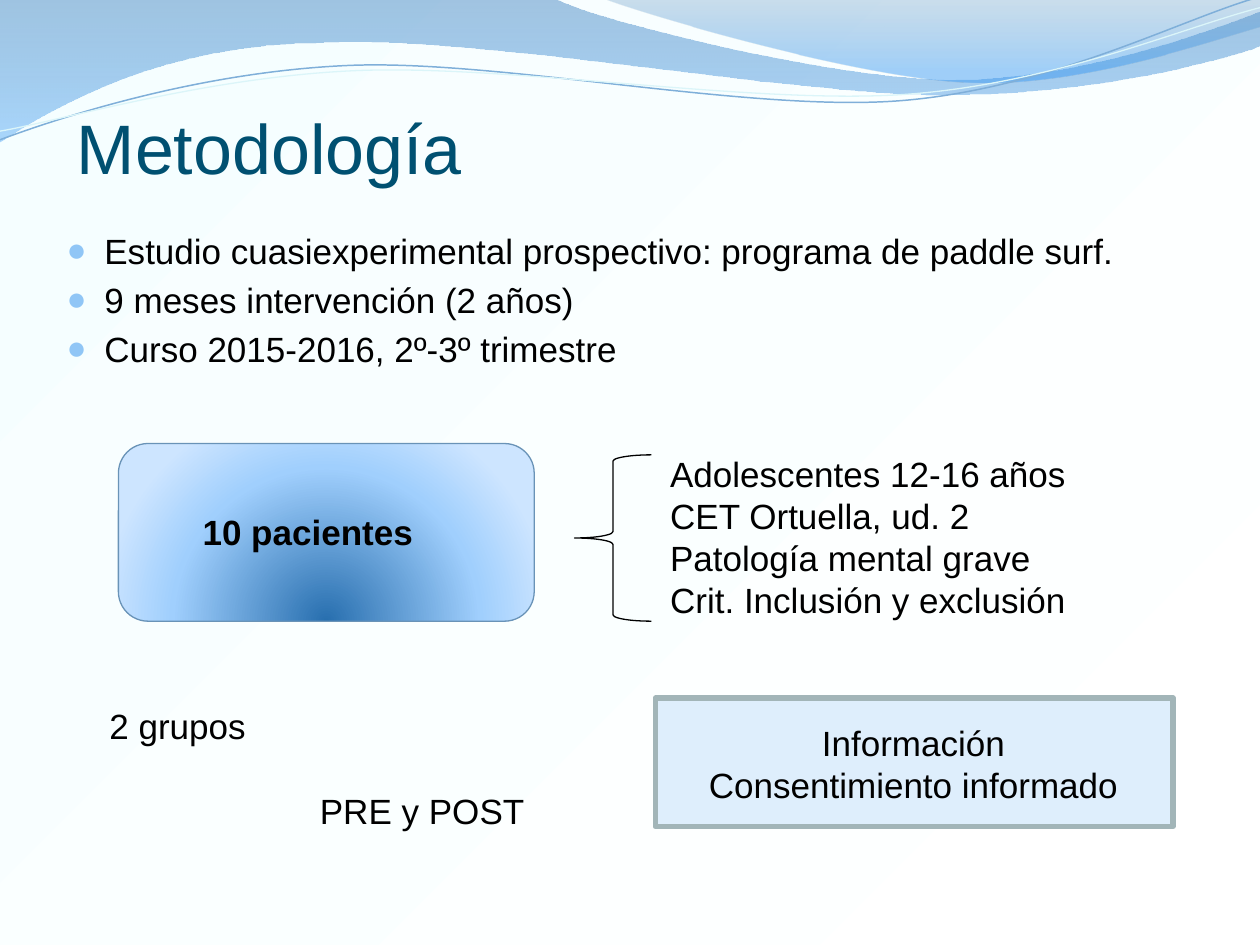
from dataclasses import dataclass

from lxml import etree
from pptx import Presentation
from pptx.dml.color import RGBColor
from pptx.enum.shapes import MSO_SHAPE
from pptx.enum.text import MSO_ANCHOR, MSO_AUTO_SIZE, PP_ALIGN
from pptx.oxml import parse_xml
from pptx.oxml.ns import nsdecls, qn
from pptx.util import Inches, Pt

RECT, ROUNDED, BRACE = MSO_SHAPE.RECTANGLE, MSO_SHAPE.ROUNDED_RECTANGLE, MSO_SHAPE.LEFT_BRACE
LEFT, CENTER = PP_ALIGN.LEFT, PP_ALIGN.CENTER
TOP = MSO_ANCHOR.TOP
GROW = MSO_AUTO_SIZE.SHAPE_TO_FIT_TEXT
COLS, ROWS = 100, 75  # grid of the slide
CELL = Inches(0.1)


@dataclass(frozen=True)
class Theme:
    font: str = "Arial"
    title_size: int = 40
    text_size: int = 20
    title: str = "005071"
    text: str = "000000"
    bullet: str = "90C6F6"
    panel: str = "DEEEFC"
    panel_line: str = "A2B5B8"
    card_line: str = "6993B7"
    wave_dark: str = "7FAFD9"
    wave_light: str = "DBF5F9"
    # gradient stops: position, colour and, where not solid, opacity
    background: tuple = ((0, "FFFFFF"), (100, "F5FEFF"))
    card: tuple = ((0, "286FAF"), (68, "A0CFFD"), (100, "CDE5FF"))
    wave_back: tuple = ((0, "377EBE", 45), (100, "69B5F9", 55))
    wave_front: tuple = ((0, "5F93C1", 30), (80, "3496F1", 45))


def grid(*values):
    return [round(v * CELL) for v in values]


def gradient(parent, stops, angle=None, focus=None):
    """Swap the solid fill of parent for a linear or a circular gradient."""
    fill = parse_xml(f'<a:gradFill {nsdecls("a")} rotWithShape="1"><a:gsLst/></a:gradFill>')
    for pos, colour, *opacity in stops:
        gs = etree.SubElement(fill[0], qn("a:gs"), pos=str(pos * 1000))
        clr = etree.SubElement(gs, qn("a:srgbClr"), val=colour)
        for alpha in opacity:
            etree.SubElement(clr, qn("a:alpha"), val=str(alpha * 1000))
    if focus:
        circle = etree.SubElement(fill, qn("a:path"), path="circle")
        sides = {side: str(v * 1000) for side, v in zip("ltrb", focus)}
        etree.SubElement(circle, qn("a:fillToRect"), **sides)
    else:
        etree.SubElement(fill, qn("a:lin"), ang=str(angle * 60000), scaled="0")
    parent.replace(parent.find(qn("a:solidFill")), fill)


def write(p, text, *, font, size, color, bold=False, align=LEFT):
    p.alignment = align
    r = p.add_run()
    r.text = text
    r.font.name, r.font.size, r.font.bold = font, Pt(size), bold
    r.font.color.rgb = RGBColor.from_string(color)


class SlideBuilder:
    def __init__(self, prs, theme):
        self.theme = theme
        self.s = prs.slides.add_slide(prs.slide_layouts[5])  # title only

    def background(self, stops, angle):
        self.s.background.fill.solid()
        gradient(next(self.s.element.iter(qn("p:bgPr"))), stops, angle)

    def paint(self, sp, fill=None, line=None, width=0.75, angle=90, focus=None):
        """Fill is a colour, a tuple of gradient stops or None."""
        sp.shadow.inherit = False
        if fill is None:
            sp.fill.background()
        else:
            sp.fill.solid()
            if isinstance(fill, str):
                sp.fill.fore_color.rgb = RGBColor.from_string(fill)
            else:
                gradient(sp.element.spPr, fill, angle, focus)
        if line:
            sp.line.color.rgb = RGBColor.from_string(line)
            sp.line.width = Pt(width)
        else:
            sp.line.fill.background()

    def outline(self, start, *steps, closed=True, rotation=0, **style):
        """A step of two numbers is straight, one of six is a cubic curve."""
        points = [grid(*step[i:i + 2]) for step in steps for i in range(0, len(step), 2)]
        fb = self.s.shapes.build_freeform(*grid(*start))
        fb.add_line_segments(points, close=closed)
        sp = fb.convert_to_shape()
        segments = iter(list(sp.element.iter(qn("a:lnTo"))))
        for step in steps:
            first = next(segments)
            if len(step) == 6:  # gather three points into one curve
                first.tag = qn("a:cubicBezTo")
                for _ in range(2):
                    extra = next(segments)
                    first.append(extra[0])
                    extra.getparent().remove(extra)
        sp.rotation = rotation
        self.paint(sp, **style)

    def shape(self, kind, box, **style):
        self.paint(self.s.shapes.add_shape(kind, *grid(*box)), **style)

    def title(self, text, box):
        sp = self.s.shapes.title
        sp.left, sp.top, sp.width, sp.height = grid(*box)
        tf = sp.text_frame
        tf.word_wrap, tf.vertical_anchor, tf.auto_size = False, TOP, GROW
        write(tf.paragraphs[0], text, font=self.theme.font,
              size=self.theme.title_size, color=self.theme.title)

    def text(self, lines, box, bullets=False, **style):
        tf = self.s.shapes.add_textbox(*grid(*box)).text_frame
        tf.word_wrap = True
        if not bullets:
            tf.auto_size = GROW
        for i, line in enumerate(lines):
            p = tf.add_paragraph() if i else tf.paragraphs[0]
            write(p, line, font=self.theme.font, size=self.theme.text_size,
                  color=self.theme.text, **style)
            if bullets:
                self.bullet(p)

    def bullet(self, p):
        pPr = p._p.get_or_add_pPr()
        indent = Inches(0.3)
        pPr.set("marL", str(indent))
        pPr.set("indent", str(-indent))
        before = etree.SubElement(pPr, qn("a:spcBef"))
        etree.SubElement(before, qn("a:spcPct"), val="20000")
        colour = etree.SubElement(pPr, qn("a:buClr"))
        etree.SubElement(colour, qn("a:srgbClr"), val=self.theme.bullet)
        etree.SubElement(pPr, qn("a:buSzPct"), val="95000")
        etree.SubElement(pPr, qn("a:buFont"), typeface=self.theme.font)
        etree.SubElement(pPr, qn("a:buChar"), char="●")


def main():
    prs = Presentation()
    prs.slide_width, prs.slide_height = grid(COLS, ROWS)
    theme = Theme()
    b = SlideBuilder(prs, theme)

    # Background and waves
    b.background(theme.background, angle=225)
    b.outline((0, -0.1), (44, -0.1), (47.6, 1.7, 66.4, 6.3, 75.8, 6.3),
              (85.3, 6.3, 95.8, 2.6, 100, 0.9), (100.1, 3.6),
              (98.3, 4.4, 87, 7.6, 74.6, 7.5), (62.2, 7.5, 38.2, 2.8, 25.7, 3.4),
              (12.9, 3.5, 4.6, 8.3, -0.1, 11.3), fill=theme.wave_back)
    b.outline((47.9, -0.1), (50.9, 1.1, 68.2, 6.2, 76.9, 6.5),
              (85.6, 6.9, 96.1, 3.2, 100, 2.1), (100, 0), fill=theme.wave_front)
    thin = {"closed": False, "rotation": 357.3}
    b.outline((-0.2, 8.74), (4.68, 7.18, 15.84, 4.09, 27.75, 4.15),
              (39.56, 4.21, 59.14, 9.34, 71.17, 9.01),
              (83.2, 8.67, 93.95, 3.57, 100.03, 2.16),
              line=theme.wave_dark, width=0.85, **thin)
    b.outline((-0.16, 8.05), (4.58, 7.47, 16.43, 4.52, 28.33, 4.58),
              (40.35, 4.65, 59.58, 8.76, 71.6, 8.52),
              (83.52, 8.28, 94.23, 4.18, 100.2, 2.97),
              line=theme.wave_light, **thin)

    # Title and study design
    b.title("Metodología", (5.1, 7.8, 32.9, 7.7))
    b.text(["Estudio cuasiexperimental prospectivo: programa de paddle surf.",
            "9 meses intervención (2 años)",
            "Curso 2015-2016, 2º-3º trimestre"], (4.3, 17.7, 97.5, 41.3), bullets=True)

    # Patients and their criteria
    b.shape(ROUNDED, (9.4, 35.2, 33, 14.1), fill=theme.card,
            line=theme.card_line, focus=(50, 130, 50, -30))
    b.text(["10 pacientes"], (15.1, 40, 23, 4.4), bold=True)
    b.shape(BRACE, (45.6, 36.1, 6.1, 13.2), line=theme.text)
    b.text(["Adolescentes 12-16 años", "CET Ortuella, ud. 2",
            "Patología mental grave", "Crit. Inclusión y exclusión"],
           (52.2, 35.4, 53.8, 14.5))

    # Groups and consent
    b.text(["2 grupos"], (7.7, 55.4, 23.8, 4.4))
    b.text(["PRE y POST"], (24.4, 62.2, 21.2, 4.4))
    b.shape(RECT, (52, 55.4, 41.1, 10.2), fill=theme.panel, line=theme.panel_line, width=3)
    b.text(["Información", "Consentimiento informado"], (51.6, 56.8, 41.8, 7.7), align=CENTER)

    prs.save("out.pptx")


if __name__ == "__main__":
    main()
